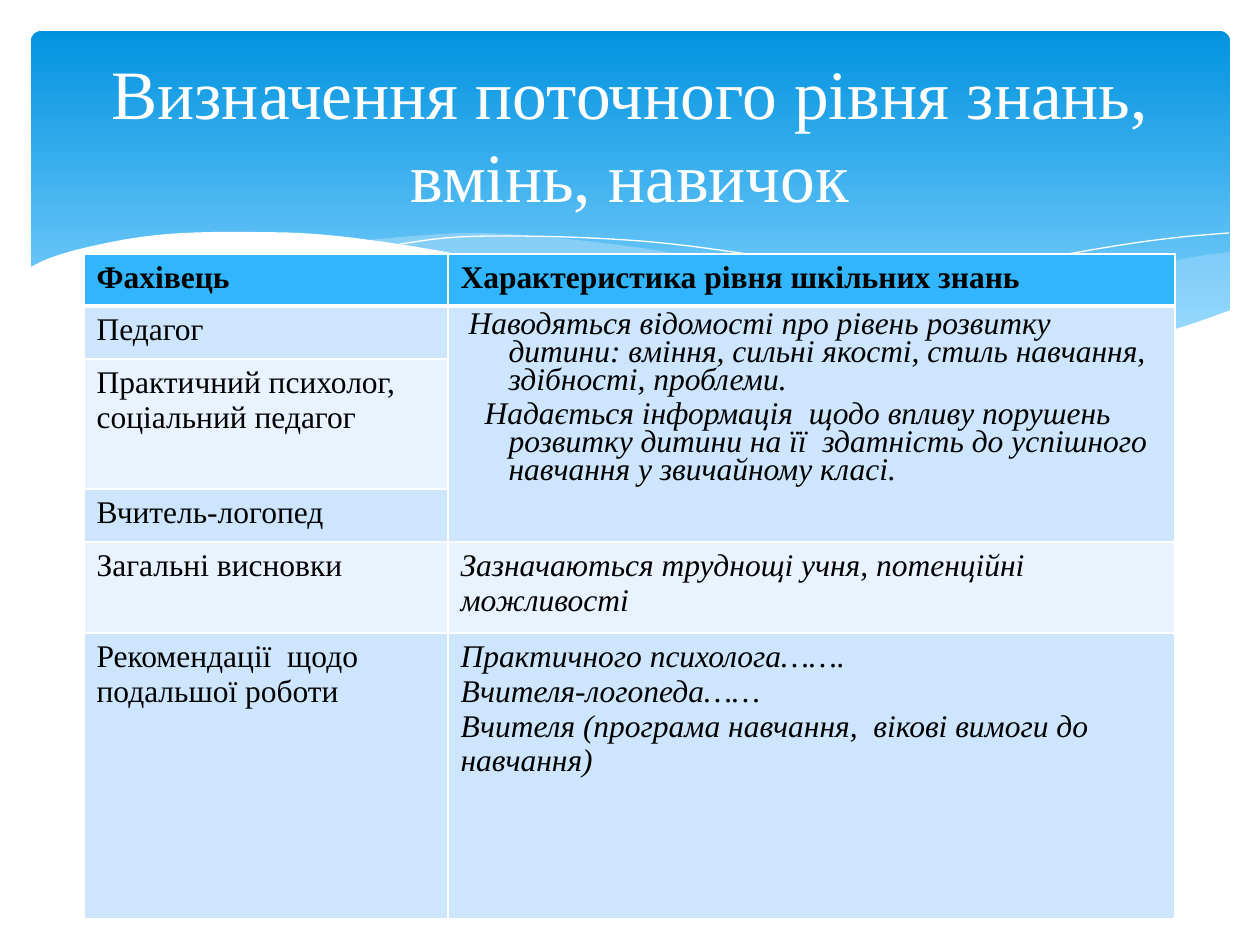
import dataclasses

import lxml.etree
import pptx
import pptx.dml.color
import pptx.enum.dml
import pptx.enum.shapes
import pptx.enum.text
import pptx.oxml.ns
import pptx.util

EMU_PER_PX = 914400 / 126
qn = pptx.oxml.ns.qn


@dataclasses.dataclass(frozen=True)
class Theme:
    font: str = "Times New Roman"
    title_size: float = 39.6
    body_size: float = 18
    paragraph_gap: float = 3.6
    white: str = "FFFFFF"
    black: str = "000000"
    sky_top: str = "0293E0"
    sky_bottom: str = "83D3FE"
    wave: str = "C6E7FC"
    header: str = "31B6FD"
    bands: tuple = ("CEE5FE", "E8F3FF")


THEME = Theme()

RIGHT_WAVE_TOP = [(1230, 252), (1194, 257), (1142, 268), (1085, 281), (982, 305),
                  (890, 324), (833, 334)]
RIGHT_WAVE_BOTTOM = [(833, 334), (906, 343), (984, 349), (1052, 349), (1120, 343),
                     (1187, 326), (1230, 311)]
MIDDLE_WAVE_TOP = [(1125, 344), (1055, 334), (977, 320), (890, 302), (793, 280),
                   (717, 262), (648, 249), (557, 238), (479, 233), (413, 236), (360, 241)]
MIDDLE_WAVE_BOTTOM = [(360, 241), (431, 251), (509, 266), (566, 280), (668, 302),
                      (757, 321), (857, 338), (942, 348), (1017, 350), (1080, 349),
                      (1125, 344)]
LEFT_CREST = [(389, 246), (445, 238), (505, 236), (591, 238), (672, 244), (766, 257),
              (876, 276), (1002, 304), (1143, 343)]
RIGHT_CREST = [(772, 324), (847, 304), (942, 281), (1053, 257), (1128, 244),
               (1182, 237), (1229, 233)]
FRONT_WAVE = [(1231, 310), (1172, 330), (1103, 344), (1019, 349), (937, 345), (842, 334),
              (730, 315), (634, 294), (563, 277), (493, 261), (398, 244), (315, 234),
              (243, 232), (184, 233), (134, 238), (84, 248), (50, 258), (29, 268)]
FRONT_BASE = [(29, 415), (1231, 415)]

COLUMNS = [364, 727]
ROWS = [52, 53, 130, 53, 91, 286]
SPECIALISTS = [
    "Фахівець",
    "Педагог",
    "Практичний психолог, соціальний педагог",
    "Вчитель-логопед",
    "Загальні висновки",
    "Рекомендації  щодо подальшої роботи",
]
HEADING = "Характеристика рівня шкільних знань"
LEVEL = [
    ("Наводяться відомості про рівень розвитку дитини: вміння, сильні якості, "
     "стиль навчання, здібності, проблеми.", -40),
    ("Надається інформація  щодо впливу порушень розвитку дитини на її  здатність "
     "до успішного навчання у звичайному класі.", -24),
]
CONCLUSIONS = ["Зазначаються труднощі учня, потенційні можливості"]
ADVICE = [
    "Практичного психолога…….",
    "Вчителя-логопеда……",
    "Вчителя (програма навчання,  вікові вимоги до навчання)",
]


def px(n):
    return pptx.util.Emu(round(n * EMU_PER_PX))


def rgb(value):
    return pptx.dml.color.RGBColor.from_string(value)


def add_text(tf, text, size=THEME.body_size, color=THEME.black, bold=False, italic=False,
             align=None, margin=0, indent=0, spacing=None, before=None):
    p = tf.paragraphs[0] if not tf.text else tf.add_paragraph()
    p.alignment = align
    p.line_spacing = spacing
    if before is not None:
        p.space_before = pptx.util.Pt(before)
    if margin:
        pPr = p._p.get_or_add_pPr()
        pPr.set("marL", str(px(margin)))
        pPr.set("indent", str(px(indent)))
    r = p.add_run()
    r.text = text
    r.font.name = THEME.font
    r.font.size = pptx.util.Pt(size)
    r.font.color.rgb = rgb(color)
    r.font.bold = bold
    r.font.italic = italic


def smooth(knots, steps=5):
    ends = [knots[0], *knots, knots[-1]]
    points = [knots[0]]
    for a, b, c, d in zip(ends, ends[1:], ends[2:], ends[3:]):
        for t in (i / steps for i in range(1, steps + 1)):
            points.append(tuple(
                (2 * q + (u - o) * t + (2 * o - 5 * q + 4 * u - v) * t ** 2
                 + (3 * q - o - 3 * u + v) * t ** 3) / 2
                for o, q, u, v in zip(a, b, c, d)))
    return points


def draw_outline(s, points, close):
    emu = [(px(x), px(y)) for x, y in points]
    builder = s.shapes.build_freeform(*emu[0], scale=1.0)
    builder.add_line_segments(emu[1:], close=close)
    sp = builder.convert_to_shape()
    sp.shadow.inherit = False
    return sp


def add_wave(s, points, color, alpha=100):
    sp = draw_outline(s, points, True)
    sp.line.fill.background()
    sp.fill.solid()
    sp.fill.fore_color.rgb = rgb(color)
    if alpha < 100:
        clr = sp._element.spPr.find(qn("a:solidFill")).find(qn("a:srgbClr"))
        lxml.etree.SubElement(clr, qn("a:alpha"), val=str(alpha * 1000))


def add_crest(s, knots):
    sp = draw_outline(s, smooth(knots), False)
    sp.fill.background()
    sp.line.color.rgb = rgb(THEME.white)
    sp.line.width = 0


def add_sky(s):
    sp = s.shapes.add_shape(pptx.enum.shapes.MSO_SHAPE.ROUNDED_RECTANGLE,
                            px(31), px(31), px(1199), px(340))
    sp.adjustments[0] = 0.03
    sp.shadow.inherit = False
    sp.line.fill.background()
    sp.fill.gradient()
    sp.fill.gradient_angle = 270
    stops = zip(sp.fill.gradient_stops, (0, 0.9), (THEME.sky_top, THEME.sky_bottom))
    for stop, position, color in stops:
        stop.position = position
        stop.color.rgb = rgb(color)


def add_title(s, text):
    tf = s.shapes.add_textbox(px(63), px(47), px(1134), px(173)).text_frame
    tf.word_wrap = True
    tf.vertical_anchor = pptx.enum.text.MSO_ANCHOR.MIDDLE
    add_text(tf, text, size=THEME.title_size, color=THEME.white,
             align=pptx.enum.text.PP_ALIGN.CENTER)


def style_cell(cell, fill, top=1, bottom=1):
    tcPr = cell._tc.get_or_add_tcPr()
    for side, width in (("L", 1), ("R", 1), ("T", top), ("B", bottom)):
        ln = lxml.etree.SubElement(tcPr, qn("a:ln" + side), w=str(pptx.util.Pt(width)))
        solid = lxml.etree.SubElement(ln, qn("a:solidFill"))
        lxml.etree.SubElement(solid, qn("a:srgbClr"), val=THEME.white)
    cell.fill.solid()
    cell.fill.fore_color.rgb = rgb(fill)


def add_levels_table(s):
    table = s.shapes.add_table(len(ROWS), len(COLUMNS), px(84), px(254),
                               px(sum(COLUMNS)), px(sum(ROWS))).table
    for column, width in zip(table.columns, COLUMNS):
        column.width = px(width)
    for i, (row, height) in enumerate(zip(table.rows, ROWS)):
        row.height = px(height)
        fill = THEME.bands[(i - 1) % 2] if i else THEME.header
        for cell in row.cells:
            style_cell(cell, fill, top=3 if i == 1 else 1, bottom=1 if i else 3)
        add_text(row.cells[0].text_frame, SPECIALISTS[i], bold=i == 0)
    table.cell(1, 1).merge(table.cell(3, 1))
    add_text(table.cell(0, 1).text_frame, HEADING, bold=True)
    for text, indent in LEVEL:
        add_text(table.cell(1, 1).text_frame, text, italic=True, margin=48, indent=indent,
                 spacing=0.8, before=THEME.paragraph_gap)
    for i, lines in ((4, CONCLUSIONS), (5, ADVICE)):
        for text in lines:
            add_text(table.cell(i, 1).text_frame, text, italic=True)


def main():
    prs = pptx.Presentation()
    prs.slide_width, prs.slide_height = px(1260), px(945)
    s = prs.slides.add_slide(prs.slide_layouts[6])
    add_sky(s)
    add_wave(s, smooth(RIGHT_WAVE_TOP) + smooth(RIGHT_WAVE_BOTTOM), THEME.wave, 29)
    add_wave(s, smooth(MIDDLE_WAVE_TOP) + smooth(MIDDLE_WAVE_BOTTOM), THEME.wave, 40)
    add_crest(s, LEFT_CREST)
    add_crest(s, RIGHT_CREST)
    add_wave(s, smooth(FRONT_WAVE) + FRONT_BASE, THEME.white)
    add_levels_table(s)
    add_title(s, "Визначення поточного рівня знань, вмінь, навичок")
    prs.save("out.pptx")


if __name__ == "__main__":
    main()
